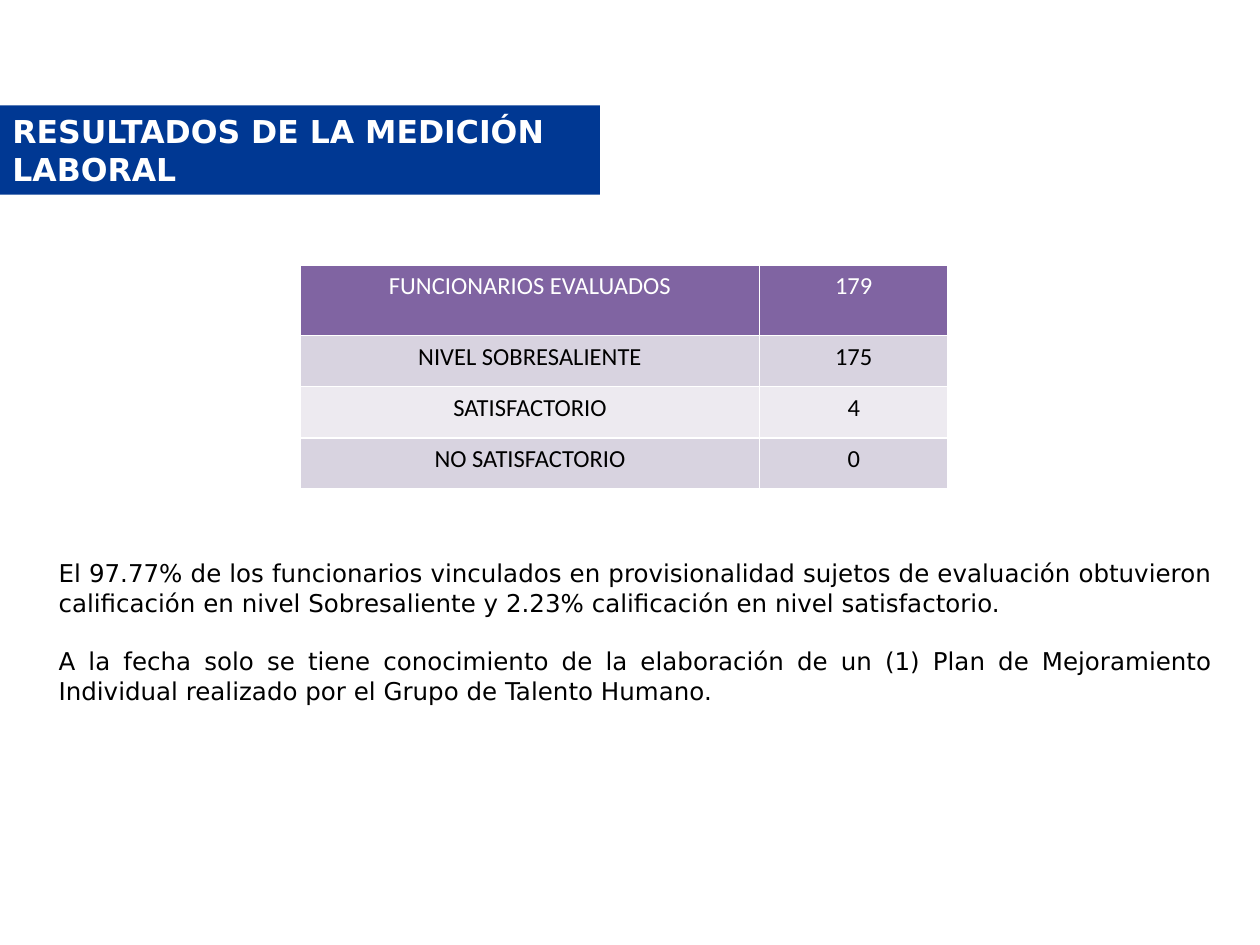
from typing import NamedTuple

from lxml.etree import SubElement
from pptx import Presentation
from pptx.dml.color import RGBColor
from pptx.enum.shapes import MSO_SHAPE
from pptx.enum.text import MSO_ANCHOR, PP_ALIGN
from pptx.oxml.ns import qn
from pptx.util import Pt

WHITE = RGBColor(0xFF, 0xFF, 0xFF)
BLACK = RGBColor(0x00, 0x00, 0x00)
BLUE = RGBColor(0x00, 0x38, 0x93)
PURPLE = RGBColor(0x80, 0x64, 0xA2)
LILAC = RGBColor(0xD8, 0xD3, 0xE0)
PALE_LILAC = RGBColor(0xED, 0xEA, 0xF0)


class Result(NamedTuple):
    label: str
    count: int
    height: float
    fill: RGBColor
    color: RGBColor = BLACK


RESULTS = (
    Result("FUNCIONARIOS EVALUADOS", 179, 40.4, PURPLE, WHITE),
    Result("NIVEL SOBRESALIENTE", 175, 29.2, LILAC),
    Result("SATISFACTORIO", 4, 29.2, PALE_LILAC),
    Result("NO SATISFACTORIO", 0, 29.2, LILAC),
)
COLUMN_WIDTHS = (262.5, 107.5)
CONCLUSIONS = (
    "El 97.77% de los funcionarios vinculados en provisionalidad sujetos de "
    "evaluación obtuvieron calificación en nivel Sobresaliente y 2.23% "
    "calificación en nivel satisfactorio.",
    "A la fecha solo se tiene conocimiento de la elaboración de un (1) Plan de "
    "Mejoramiento Individual realizado por el Grupo de Talento Humano.",
)


def write(frame, *texts: str, font: str = "DejaVu Sans", size: float = 14,
          color: RGBColor = BLACK, bold: bool = False,
          align: PP_ALIGN = PP_ALIGN.LEFT, gap: float = 0) -> None:
    frame.word_wrap = True
    for index, text in enumerate(texts):
        paragraph = frame.add_paragraph() if index else frame.paragraphs[0]
        paragraph.alignment = align
        paragraph.space_before = Pt(gap if index else 0)
        run = paragraph.add_run()
        run.text = text
        run.font.name = font
        run.font.size = Pt(size)
        run.font.bold = bold
        run.font.color.rgb = color


def outline_cell(cell, color: RGBColor, width: float) -> None:
    properties = cell._tc.get_or_add_tcPr()
    for side in ("a:lnL", "a:lnR", "a:lnT", "a:lnB"):
        border = SubElement(properties, qn(side), w=str(Pt(width)))
        fill = SubElement(border, qn("a:solidFill"))
        SubElement(fill, qn("a:srgbClr"), val=str(color))


def draw_heading(slide) -> None:
    banner = slide.shapes.add_shape(
        MSO_SHAPE.RECTANGLE, Pt(0), Pt(60.25), Pt(342.8), Pt(51))
    banner.shadow.inherit = False
    banner.fill.solid()
    banner.fill.fore_color.rgb = BLUE
    banner.line.fill.background()
    banner.text_frame.vertical_anchor = MSO_ANCHOR.MIDDLE
    write(banner.text_frame, "RESULTADOS DE LA MEDICIÓN LABORAL",
          size=18, color=WHITE, bold=True)


def draw_results(slide) -> None:
    table = slide.shapes.add_table(
        len(RESULTS), len(COLUMN_WIDTHS), Pt(171.6), Pt(151.4),
        Pt(sum(COLUMN_WIDTHS)), Pt(sum(r.height for r in RESULTS))).table
    for column, width in zip(table.columns, COLUMN_WIDTHS):
        column.width = Pt(width)
    for row, result in zip(table.rows, RESULTS):
        row.height = Pt(result.height)
        for cell, text in zip(row.cells, (result.label, str(result.count))):
            write(cell.text_frame, text, font="Calibri", color=result.color,
                  align=PP_ALIGN.CENTER)
            outline_cell(cell, WHITE, 1)
            cell.fill.solid()
            cell.fill.fore_color.rgb = result.fill


def draw_conclusions(slide) -> None:
    conclusions = slide.shapes.add_textbox(
        Pt(26.4), Pt(315.4), Pt(673.6), Pt(108.7))
    write(conclusions.text_frame, *CONCLUSIONS, align=PP_ALIGN.JUSTIFY, gap=16.8)


def main() -> None:
    """Build the slide with the results of the work evaluation."""
    presentation = Presentation()
    presentation.slide_width = Pt(720)
    presentation.slide_height = Pt(540)
    slide = presentation.slides.add_slide(presentation.slide_layouts[6])
    draw_heading(slide)
    draw_results(slide)
    draw_conclusions(slide)
    presentation.save("out.pptx")


if __name__ == "__main__":
    main()
